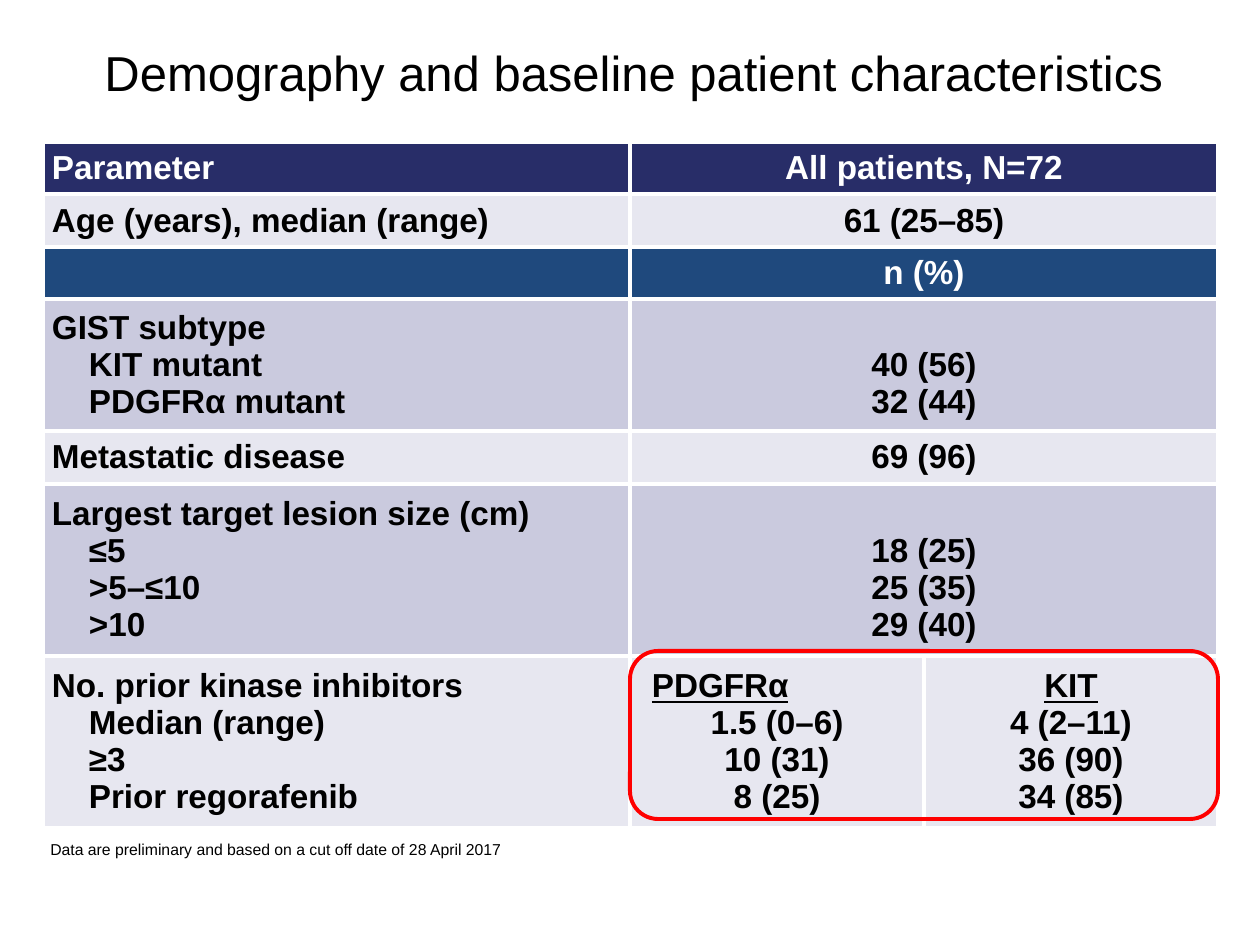
from dataclasses import dataclass

from lxml.etree import SubElement
from pptx import Presentation
from pptx.dml.color import RGBColor
from pptx.enum.shapes import MSO_SHAPE
from pptx.enum.text import MSO_ANCHOR, MSO_AUTO_SIZE, PP_ALIGN
from pptx.oxml.ns import qn
from pptx.util import Emu, Pt


@dataclass(frozen=True)
class Theme:
    font: str = "Arial"
    white: str = "FFFFFF"
    black: str = "000000"
    navy: str = "282D68"
    blue: str = "1F497D"
    pale: str = "E7E7F0"
    lilac: str = "CACADE"
    red: str = "FF0000"
    head: int = 28
    body: int = 19
    note: int = 9
    rule: float = 2.25


THEME = Theme()
LINE = 37    # height of a table line
SIDE = 9     # cell inset, left and right
EDGE = 6     # cell inset, top and bottom


def px(n):
    return Emu(round(n * 914400 / 126))


def tint(name):
    return RGBColor.from_string(name)


def write(para, text, size=THEME.body, color=THEME.black, bold=False,
          under=False, align=PP_ALIGN.LEFT, pitch=None):
    para.alignment = align
    if pitch:
        para.line_spacing = px(pitch)
    run = para.add_run()
    run.text = text
    font = run.font
    font.name, font.size, font.bold = THEME.font, Pt(size), bold
    font.color.rgb = tint(color)
    if under:
        font.underline = True


def indent(para, left):
    props = para._p.get_or_add_pPr()
    props.set("marL", str(px(left)))
    props.set("indent", "0")


def add_tab(para, stop):
    tabs = SubElement(para._p.get_or_add_pPr(), qn("a:tabLst"))
    SubElement(tabs, qn("a:tab"), pos=str(px(stop)), algn="l")


def border(cell, color, width):
    props = cell._tc.get_or_add_tcPr()
    for spot, side in enumerate(("lnL", "lnR", "lnT", "lnB")):
        line = props.makeelement(qn("a:" + side), {"w": str(Pt(width))})
        props.insert(spot, line)
        fill = SubElement(line, qn("a:solidFill"))
        SubElement(fill, qn("a:srgbClr"), val=color)


class Deck:
    def __init__(self, theme, wide, high):
        self.theme = theme
        self.file = Presentation()
        self.file.slide_width, self.file.slide_height = px(wide), px(high)
        self.slide = self.file.slides.add_slide(self.file.slide_layouts[5])

    def title(self, text, *box):
        shape = self.slide.shapes.title
        shape.left, shape.top, shape.width, shape.height = map(px, box)
        frame = shape.text_frame
        frame.vertical_anchor = MSO_ANCHOR.MIDDLE
        write(frame.paragraphs[0], text, self.theme.head,
              align=PP_ALIGN.CENTER)

    def note(self, text, *box):
        frame = self.slide.shapes.add_textbox(*map(px, box)).text_frame
        frame.word_wrap = False
        frame.auto_size = MSO_AUTO_SIZE.SHAPE_TO_FIT_TEXT
        frame.vertical_anchor = MSO_ANCHOR.BOTTOM
        write(frame.paragraphs[0], text, self.theme.note)

    def table(self, left, top, cols, rows):
        grid = self.slide.shapes.add_table(
            len(rows), len(cols), px(left), px(top),
            px(sum(cols)), px(sum(rows))).table
        for col, wide in zip(grid.columns, cols):
            col.width = px(wide)
        for row, high in zip(grid.rows, rows):
            row.height = px(high)
        return grid

    def cell(self, cell, fill, lines, color, mid=False, skip=0, under=False):
        cell.fill.solid()
        cell.fill.fore_color.rgb = tint(fill)
        border(cell, self.theme.white, self.theme.rule)
        cell.vertical_anchor = MSO_ANCHOR.MIDDLE
        cell.margin_left = cell.margin_right = px(SIDE)
        cell.margin_top = px(EDGE + skip * LINE)
        cell.margin_bottom = px(EDGE)
        frame = cell.text_frame
        for i, text in enumerate(lines):
            para = frame.add_paragraph() if i else frame.paragraphs[0]
            tabbed = "\t" in text
            write(para, text, color=color, bold=True, pitch=LINE,
                  under=under and i == 0,
                  align=PP_ALIGN.CENTER if mid and not tabbed
                  else PP_ALIGN.LEFT)
            if tabbed:
                indent(para, 13)
                add_tab(para, 260)
            elif i and not mid:
                indent(para, LINE)

    def ring(self, *box):
        shape = self.slide.shapes.add_shape(
            MSO_SHAPE.ROUNDED_RECTANGLE, *map(px, box))
        shape.shadow.inherit = False
        shape.fill.background()
        shape.line.color.rgb = tint(self.theme.red)
        shape.line.width = Pt(self.theme.rule)


def main():
    t = THEME
    deck = Deck(t, 1260, 945)
    deck.title("Demography and baseline patient characteristics",
               40, 21, 1187, 101)

    # Table rows: height, fill, text colour, labels, value columns
    rows = [
        (52, t.navy, t.white, ["Parameter"], [["All patients, N=72"]]),
        (53, t.pale, t.black, ["Age (years), median (range)"],
         [["61 (25–85)"]]),
        (52, t.blue, t.white, [], [["n (%)"]]),
        (132, t.lilac, t.black,
         ["GIST subtype", "KIT mutant", "PDGFRα mutant"],
         [["40 (56)", "32 (44)"]]),
        (53, t.pale, t.black, ["Metastatic disease"], [["69 (96)"]]),
        (172, t.lilac, t.black,
         ["Largest target lesion size (cm)", "≤5", ">5–≤10", ">10"],
         [["18 (25)", "25 (35)", "29 (40)"]]),
        (172, t.pale, t.black,
         ["No. prior kinase inhibitors", "Median (range)", "≥3",
          "Prior regorafenib"],
         [["PDGFRα\t", "1.5 (0–6)", "10 (31)", "8 (25)"],
          ["KIT", "4 (2–11)", "36 (90)", "34 (85)"]]),
    ]
    grid = deck.table(43, 142, [587, 294, 294], [row[0] for row in rows])
    for r, (_, fill, color, names, parts) in enumerate(rows):
        deck.cell(grid.cell(r, 0), fill, names, color)
        split = len(parts) > 1
        if not split:
            grid.cell(r, 1).merge(grid.cell(r, 2))
        for c, lines in enumerate(parts, 1):
            # Values sit level with the labels below the group name
            skip = len(names) - len(lines) if names else 0
            deck.cell(grid.cell(r, c), fill, lines, color, mid=True,
                      skip=skip, under=split)

    # Footnote and highlight
    deck.note("Data are preliminary and based on a cut off date of "
              "28 April 2017", 38, 833, 481, 32)
    deck.ring(630, 651, 588, 168)
    deck.file.save("out.pptx")


if __name__ == "__main__":
    main()
